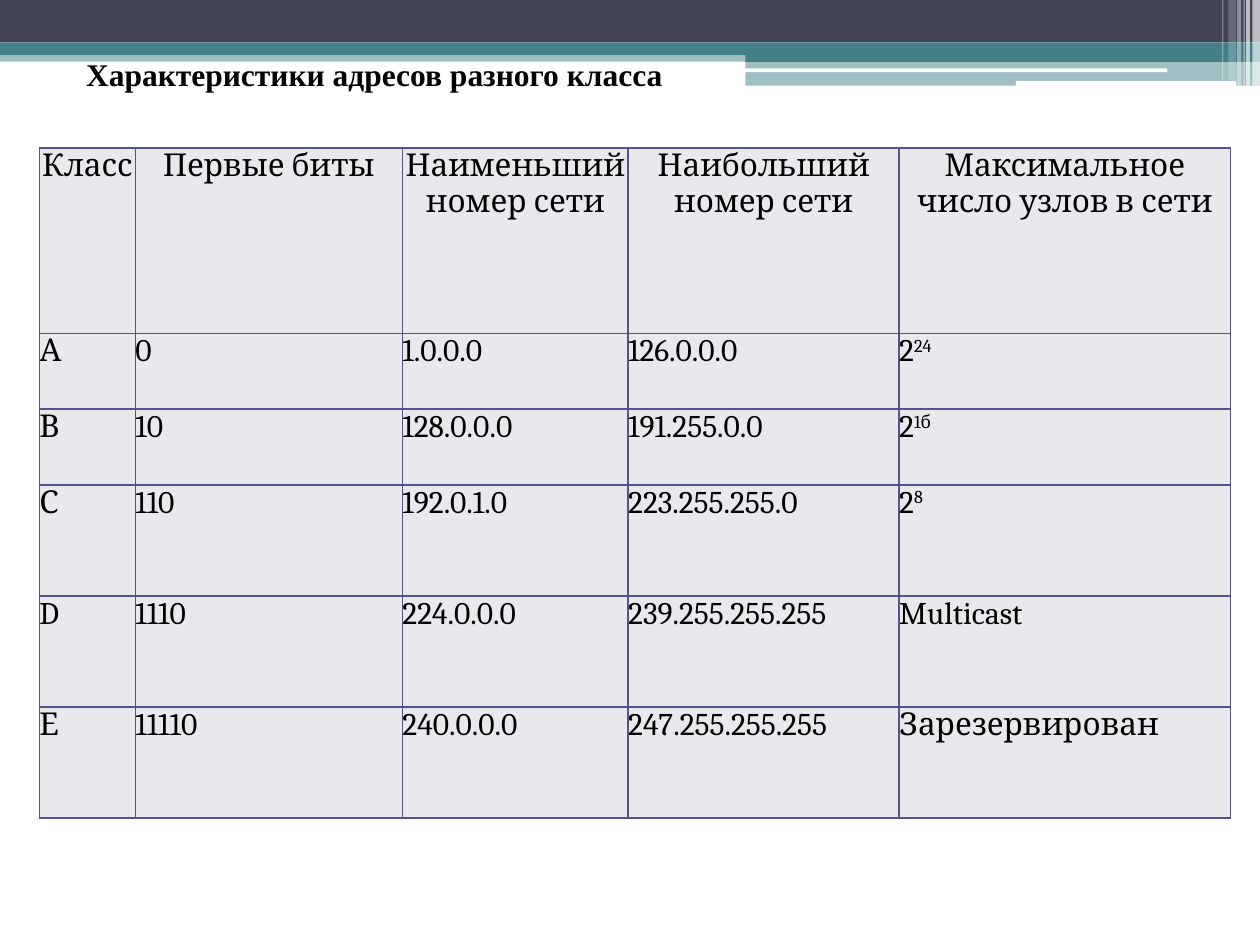
from dataclasses import dataclass

from lxml import etree
from pptx import Presentation
from pptx.dml.color import RGBColor
from pptx.enum.shapes import MSO_SHAPE
from pptx.enum.text import MSO_ANCHOR, MSO_AUTO_SIZE, PP_ALIGN
from pptx.oxml.ns import qn
from pptx.util import Pt

RECTANGLE, ROUNDED = MSO_SHAPE.RECTANGLE, MSO_SHAPE.ROUNDED_RECTANGLE
TOP, NO_FIT = MSO_ANCHOR.TOP, MSO_AUTO_SIZE.NONE
LEFT, CENTER = PP_ALIGN.LEFT, PP_ALIGN.CENTER


@dataclass(frozen=True)
class Theme:
    navy: str = "424456"
    teal: str = "438086"
    white: str = "FFFFFF"
    ink: str = "000000"
    cell: str = "E9E9ED"
    border: str = "53548A"
    title_font: str = "Times New Roman"
    table_font: str = "Cambria"
    text_size: int = 18


THEME = Theme()
TITLE = "Характеристики адресов разного класса"
HEADERS = ["Класс", "Первые биты", "Наименьший номер сети",
           "Наибольший номер сети", "Максимальное число узлов в сети"]
# A tuple holds a base and its exponent.
ADDRESS_CLASSES = [
    ["А", "0", "1.0.0.0", "126.0.0.0", ("2", "24")],
    ["В", "10", "128.0.0.0", "191.255.0.0", ("2", "1б")],
    ["С", "110", "192.0.1.0", "223.255.255.0", ("2", "8")],
    ["D", "1110", "224.0.0.0", "239.255.255.255", "Multicast"],
    ["Е", "11110", "240.0.0.0", "247.255.255.255", "Зарезервирован"],
]
TABLE_LEFT, TABLE_TOP = 22.5, 84.5
COLUMN_WIDTHS = [54.9, 152.6, 129, 154.9, 189.4]
ROW_HEIGHTS = [106, 43.3, 43.3, 63.5, 63.5, 63.5]

# Shape, left, top, width, height, colour, opacity in percent
BANDS = [
    (RECTANGLE, 0, 28.8, 720, 6.5, THEME.teal, 50),
    (RECTANGLE, 0, 0, 720, 24.3, THEME.navy, 100),
    (RECTANGLE, 0, 24.3, 720, 7.2, THEME.teal, 100),
    (RECTANGLE, 426, 28.2, 294, 7.2, THEME.teal, 100),
    (RECTANGLE, 426, 34.7, 294, 14.2, THEME.teal, 50),
    (ROUNDED, 425.8, 39.1, 241.2, 2.2, THEME.white, 100),
    (ROUNDED, 580.5, 46.3, 126, 2.9, THEME.white, 100),
]
# Left, width, height, opacity in percent
STRIPES = [
    (715.7, 4.3, 49, 65), (712.1, 2.2, 49, 65), (710.6, 0.7, 49, 60),
    (707, 2.2, 49, 40), (702, 4.3, 46, 20), (698.4, 0.7, 46, 30),
]


def color(code):
    return RGBColor.from_string(code)


def add_band(slide, kind, left, top, width, height, code, opacity):
    band = slide.shapes.add_shape(kind, Pt(left), Pt(top), Pt(width), Pt(height))
    band.shadow.inherit = False
    band.line.fill.background()
    band.fill.solid()
    band.fill.fore_color.rgb = color(code)
    if opacity < 100:
        fill = band.fill._xPr.find(qn("a:solidFill"))
        etree.SubElement(fill[0], qn("a:alpha"), val=str(opacity * 1000))


def style_text(para, font_name, align, bold=False):
    para.alignment = align
    para.font.name = font_name
    para.font.size = Pt(THEME.text_size)
    para.font.bold = bold
    para.font.color.rgb = color(THEME.ink)


def place_title(slide):
    title = slide.shapes.title
    title.left, title.top, title.width, title.height = (
        Pt(0), Pt(28), Pt(428), Pt(29))
    frame = title.text_frame
    frame.text = TITLE
    frame.word_wrap = True
    frame.auto_size = NO_FIT
    frame.vertical_anchor = TOP
    style_text(frame.paragraphs[0], THEME.title_font, CENTER, bold=True)


def add_borders(cell):
    properties = cell._tc.get_or_add_tcPr()
    for position, side in enumerate(("lnL", "lnR", "lnT", "lnB")):
        line = etree.Element(qn(f"a:{side}"), w=str(Pt(1)))
        fill = etree.SubElement(line, qn("a:solidFill"))
        etree.SubElement(fill, qn("a:srgbClr"), val=THEME.border)
        properties.insert(position, line)


def fill_cell(cell, content, align):
    cell.margin_left = cell.margin_right = cell.margin_top = cell.margin_bottom = 0
    cell.fill.solid()
    cell.fill.fore_color.rgb = color(THEME.cell)
    add_borders(cell)
    base, *exponents = content if isinstance(content, tuple) else (content,)
    para = cell.text_frame.paragraphs[0]
    para.add_run().text = base
    for exponent in exponents:
        span = para.add_run()
        span.text = exponent
        span._r.get_or_add_rPr().set("baseline", "30000")
    style_text(para, THEME.table_font, align)


def add_address_table(slide):
    rows = [HEADERS] + ADDRESS_CLASSES
    table = slide.shapes.add_table(
        len(rows), len(HEADERS), Pt(TABLE_LEFT), Pt(TABLE_TOP),
        Pt(sum(COLUMN_WIDTHS)), Pt(sum(ROW_HEIGHTS))).table
    table.horz_banding = False
    for column, width in zip(table.columns, COLUMN_WIDTHS):
        column.width = Pt(width)
    for row, height in zip(table.rows, ROW_HEIGHTS):
        row.height = Pt(height)
    for row_index, row in enumerate(rows):
        align = LEFT if row_index else CENTER
        for column_index, content in enumerate(row):
            fill_cell(table.cell(row_index, column_index), content, align)


def main():
    deck = Presentation()
    deck.slide_width, deck.slide_height = Pt(720), Pt(540)
    slide = deck.slides.add_slide(deck.slide_layouts.get_by_name("Title Only"))
    for band in BANDS:
        add_band(slide, *band)
    for left, width, height, opacity in STRIPES:
        add_band(slide, RECTANGLE, left, 0, width, height, THEME.white, opacity)
    place_title(slide)
    add_address_table(slide)
    deck.save("out.pptx")


if __name__ == "__main__":
    main()
